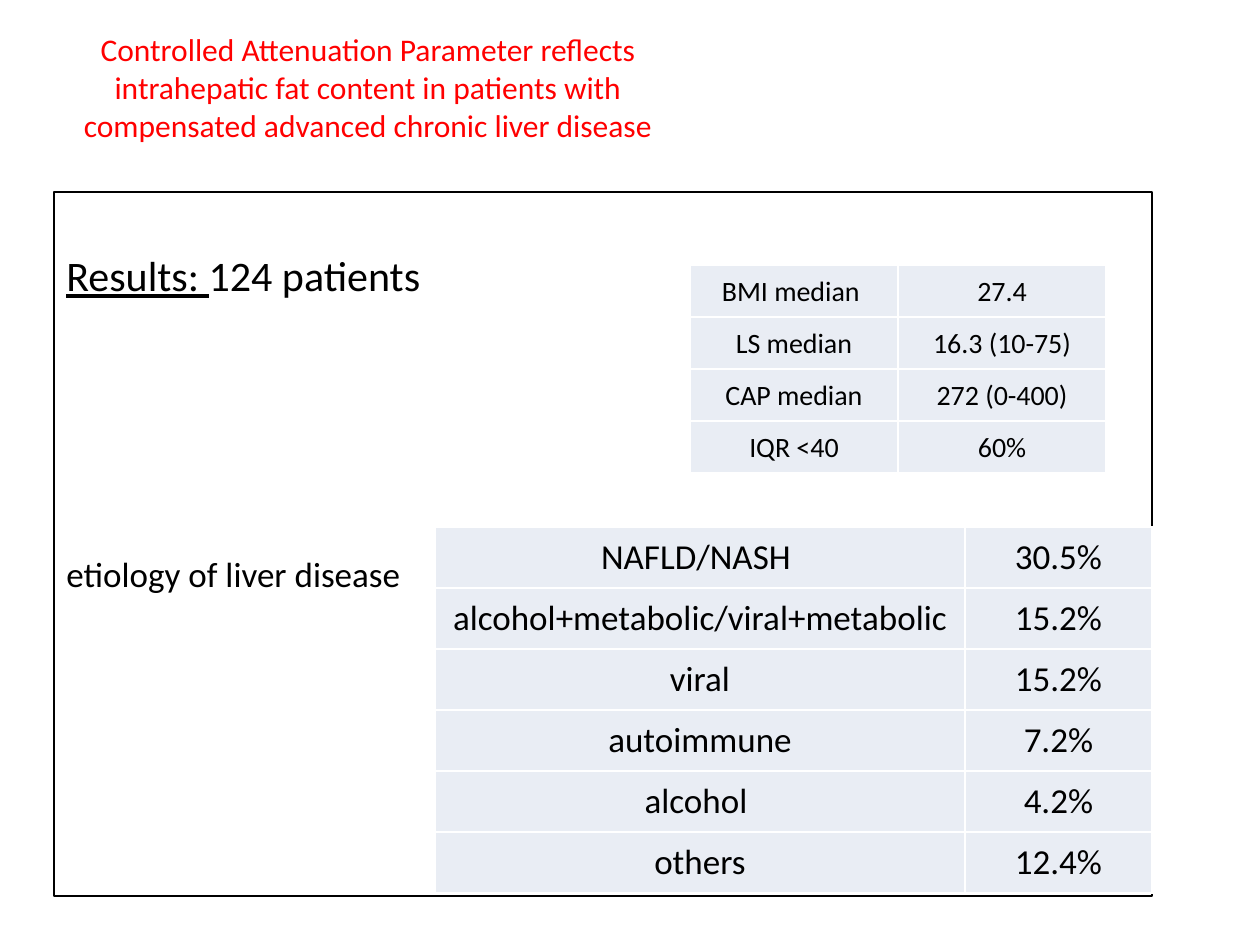
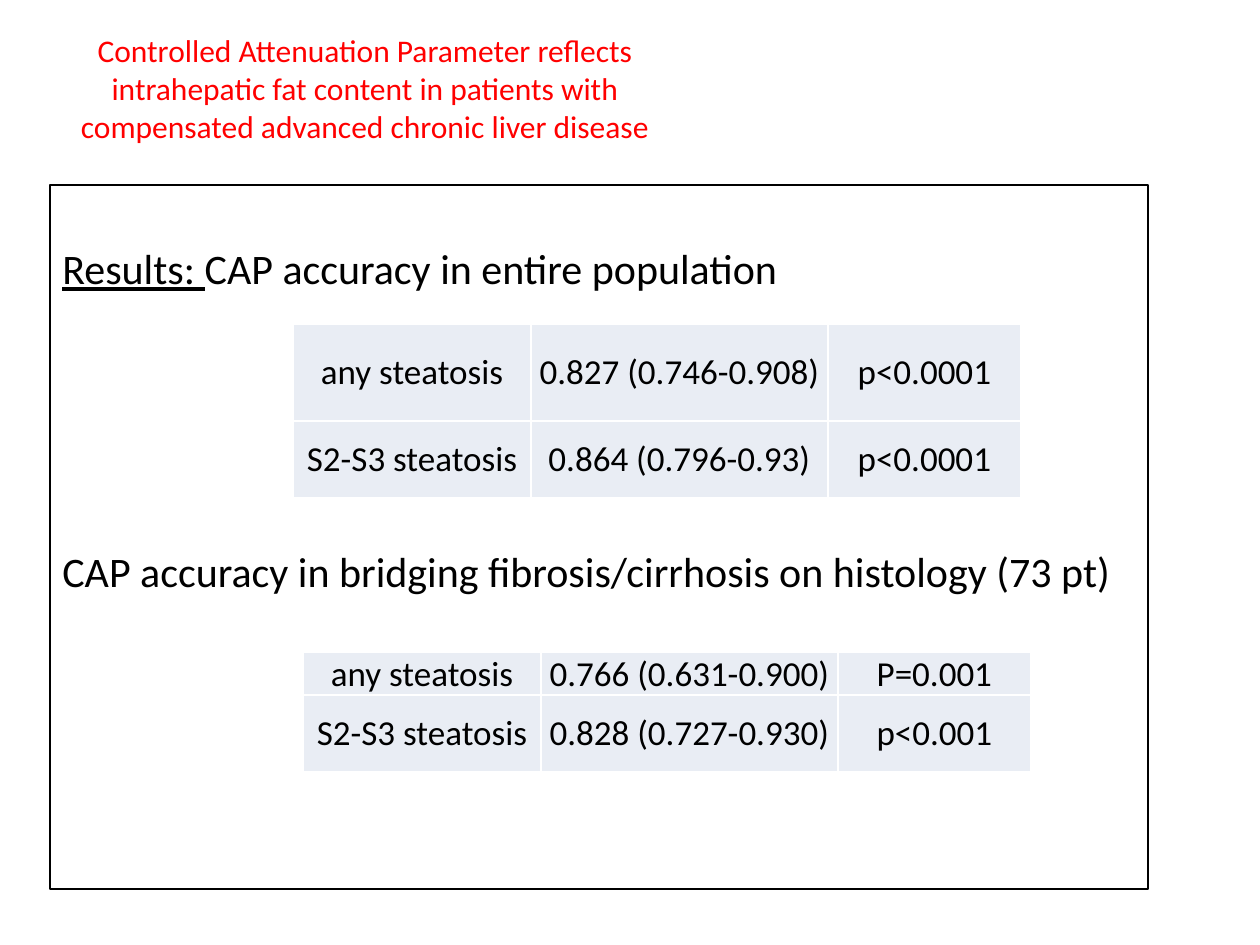
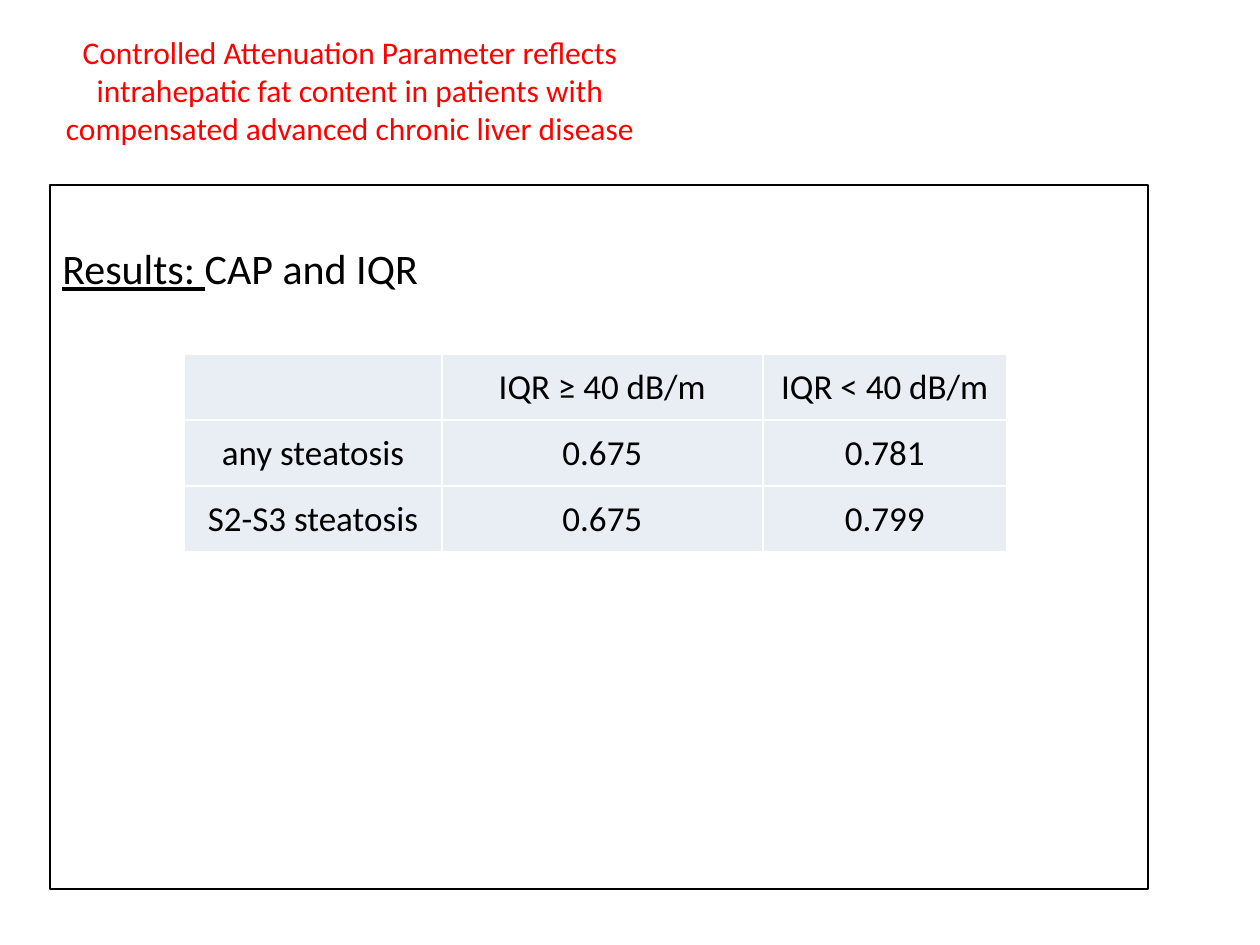
from lxml.etree import SubElement
from pptx import Presentation
from pptx.dml.color import RGBColor
from pptx.enum.shapes import MSO_SHAPE
from pptx.enum.text import MSO_ANCHOR, PP_ALIGN
from pptx.oxml.ns import qn
from pptx.util import Emu, Pt

# Shared look
EMU_PER_PX = 914400 / 126
FONT = "Calibri"
BLACK, WHITE, RED, CELL_FILL = "000000", "FFFFFF", "FF0000", "E9EDF4"
TITLE = ("Controlled Attenuation Parameter reflects intrahepatic fat content "
         "in patients with compensated advanced chronic liver disease")
TITLE_SIZE = (630, 127)
FRAME_SIZE = (1098, 704)
FRAME_TEXT_TOP = 58
SECOND_LINE_GAP = 144
ACCURACY_COLUMNS = (238, 297, 193)

# Content: positions, column widths and row heights in px, text sizes in points
SLIDES = [
    {
        "title_at": (53, 24),
        "frame_at": (54, 192),
        "result": "124 patients",
        "second_line": ("etiology of liver disease", 20),
        "tables": [
            {"at": (435, 527), "columns": (530, 187), "row_heights": (61,) * 6, "size": 20,
             "rows": [("NAFLD/NASH ", "30.5%"),
                      ("alcohol+metabolic/viral+metabolic", "15.2%"),
                      ("viral", "15.2%"),
                      ("autoimmune", "7.2%"),
                      ("alcohol ", "4.2%"),
                      ("others", "12.4%")]},
            {"at": (690, 265), "columns": (208, 208), "row_heights": (52,) * 4, "size": 16,
             "rows": [("BMI median ", "27.4"),
                      ("LS median", "16.3 (10-75)"),
                      ("CAP median", "272 (0-400)"),
                      ("IQR <40", "60%")]},
        ],
    },
    {
        "title_at": (50, 25),
        "frame_at": (50, 185),
        "result": "CAP accuracy in entire population",
        "second_line": ("CAP accuracy in bridging fibrosis/cirrhosis on histology (73 pt)", 24),
        "tables": [
            {"at": (293, 324), "columns": ACCURACY_COLUMNS, "row_heights": (97, 77), "size": 20,
             "rows": [("any steatosis", "0.827 (0.746-0.908)", "p<0.0001"),
                      ("S2-S3 steatosis", "0.864 (0.796-0.93)", "p<0.0001")]},
            {"at": (303, 652), "columns": ACCURACY_COLUMNS, "row_heights": (43, 77), "size": 20,
             "rows": [("any steatosis", "0.766 (0.631-0.900)", "P=0.001"),
                      ("S2-S3 steatosis", "0.828 (0.727-0.930)", "p<0.001")]},
        ],
    },
    {
        "title_at": (35, 27),
        "frame_at": (50, 185),
        "result": "CAP and IQR",
        "second_line": None,
        "tables": [
            {"at": (184, 354), "columns": (258, 321, 244), "row_heights": (66,) * 3, "size": 20,
             "rows": [("", "IQR ≥ 40 dB/m", "IQR < 40 dB/m"),
                      ("any steatosis", "0.675", "0.781"),
                      ("S2-S3 steatosis", "0.675", "0.799")]},
        ],
    },
]


def px(length):
    return Emu(round(length * EMU_PER_PX))


def color(hex_string):
    return RGBColor.from_string(hex_string)


def add_text(paragraph, text, size=24, text_color=BLACK, underline=False, align=PP_ALIGN.LEFT):
    paragraph.alignment = align
    run = paragraph.add_run()
    run.text = text
    run.font.name = FONT
    run.font.size = Pt(size)
    run.font.underline = underline
    run.font.color.rgb = color(text_color)


def add_title(slide, position):
    box = slide.shapes.add_textbox(*map(px, position + TITLE_SIZE))
    box.text_frame.word_wrap = True
    add_text(box.text_frame.paragraphs[0], TITLE, size=18, text_color=RED,
             align=PP_ALIGN.CENTER)


def add_results_frame(slide, position, result, second_line):
    frame = slide.shapes.add_shape(MSO_SHAPE.RECTANGLE, *map(px, position + FRAME_SIZE))
    frame.shadow.inherit = False
    frame.fill.background()
    frame.line.color.rgb = color(BLACK)
    frame.line.width = Pt(0.75)

    text_frame = frame.text_frame
    text_frame.word_wrap = True
    text_frame.vertical_anchor = MSO_ANCHOR.TOP
    text_frame.margin_top = px(FRAME_TEXT_TOP)
    heading = text_frame.paragraphs[0]
    add_text(heading, "Results: ", underline=True)
    add_text(heading, result)
    if second_line:
        text, size = second_line
        paragraph = text_frame.add_paragraph()
        paragraph.space_before = Pt(SECOND_LINE_GAP)
        add_text(paragraph, text, size=size)


def format_cell(cell):
    cell.vertical_anchor = MSO_ANCHOR.MIDDLE
    cell.margin_left = cell.margin_right = cell.margin_top = px(1)
    cell.margin_bottom = 0
    # Cell borders
    properties = cell._tc.get_or_add_tcPr()
    for side in ("lnL", "lnR", "lnT", "lnB"):
        border = SubElement(properties, qn(f"a:{side}"), w=str(Pt(1)))
        fill = SubElement(border, qn("a:solidFill"))
        SubElement(fill, qn("a:srgbClr"), val=WHITE)
    cell.fill.solid()
    cell.fill.fore_color.rgb = color(CELL_FILL)


def add_data_table(slide, at, columns, row_heights, size, rows):
    extent = (sum(columns), sum(row_heights))
    table = slide.shapes.add_table(len(rows), len(columns), *map(px, at + extent)).table
    table.first_row = table.horz_banding = False
    for column, width in zip(table.columns, columns):
        column.width = px(width)
    for row, height, values in zip(table.rows, row_heights, rows):
        row.height = px(height)
        for cell, value in zip(row.cells, values):
            format_cell(cell)
            if value:
                add_text(cell.text_frame.paragraphs[0], value, size=size,
                         align=PP_ALIGN.CENTER)


def main():
    presentation = Presentation()
    presentation.slide_width, presentation.slide_height = px(1260), px(945)
    for content in SLIDES:
        slide = presentation.slides.add_slide(presentation.slide_layouts[6])
        add_results_frame(slide, content["frame_at"], content["result"], content["second_line"])
        for table in content["tables"]:
            add_data_table(slide, **table)
        add_title(slide, content["title_at"])
    presentation.save("out.pptx")


if __name__ == "__main__":
    main()
